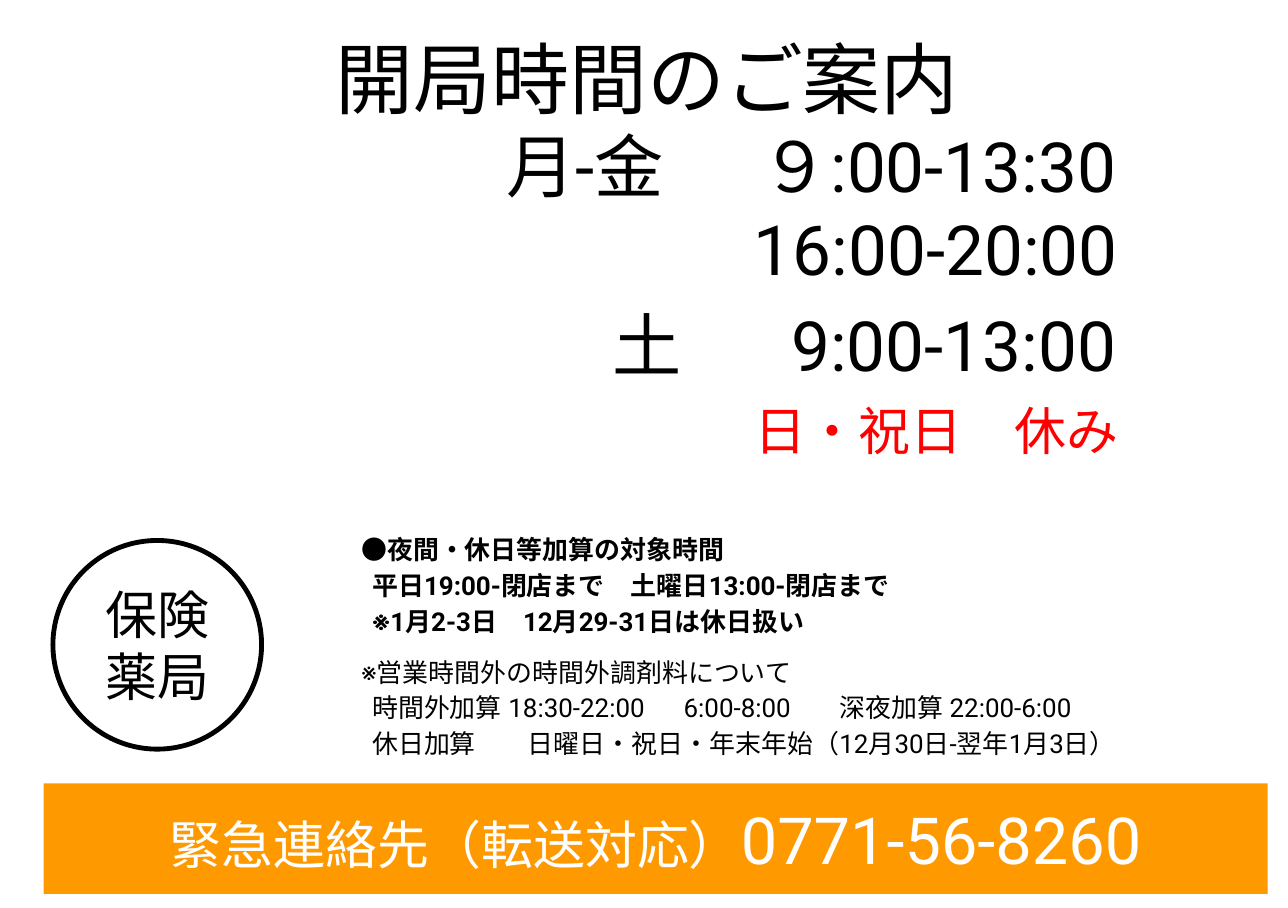
from lxml.etree import SubElement as Sub
from pptx import Presentation
from pptx.dml.color import RGBColor as Rgb
from pptx.enum.shapes import MSO_SHAPE as Geo
from pptx.enum.text import MSO_ANCHOR as Anchor, PP_ALIGN as Align
from pptx.oxml.ns import qn
from pptx.util import Inches, Pt

BLACK, WHITE, RED, ORANGE = "000000", "FFFFFF", "FF0000", "FF9900"


def color(code):
    return Rgb.from_string(code)


def write(para, text, size=12, font="Roboto", ink=BLACK, bold=False):
    """Add one formatted run to a paragraph."""
    run = para.add_run()
    run.text = text
    face = run.font
    face.size, face.name, face.bold = Pt(size), font, bold
    face.color.rgb = color(ink)
    for tag in ("a:ea", "a:cs"):
        Sub(run.font._element, qn(tag)).set("typeface", font)


class Board:
    """Holds the slide; places are percentages of its size."""

    def __init__(self, wide, high):
        self.deck = Presentation()
        self.deck.slide_width, self.deck.slide_height = Inches(wide), Inches(high)
        self.slide = self.deck.slides.add_slide(self.deck.slide_layouts[6])

    def place(self, left, top, wide, high):
        w, h = self.deck.slide_width / 100, self.deck.slide_height / 100
        return int(left * w), int(top * h), int(wide * w), int(high * h)

    def frame(self, item, pad, left=None, anchor=Anchor.MIDDLE):
        body = item.text_frame
        body.word_wrap, body.vertical_anchor = True, anchor
        body.margin_left = Inches(pad if left is None else left)
        body.margin_top = body.margin_right = body.margin_bottom = Inches(pad)
        return body

    def text(self, *box, **style):
        return self.frame(self.slide.shapes.add_textbox(*self.place(*box)), 0.07, **style)

    def shape(self, kind, *box, fill=None, line=None):
        item = self.slide.shapes.add_shape(kind, *self.place(*box))
        item.shadow.inherit = False
        if fill:
            item.fill.solid()
            item.fill.fore_color.rgb = color(fill)
        else:
            item.fill.background()
        if line:
            item.line.color.rgb = color(line)
            item.line.width = Pt(2.25)
        else:
            item.line.fill.background()
        return self.frame(item, 0.1)

    def para(self, body, align=Align.LEFT, space=None, before=0, after=0, indent=0, tabs=()):
        first = body.paragraphs[0]
        para = body.add_paragraph() if first.runs else first
        para.alignment = align
        para.space_before, para.space_after = Pt(before), Pt(after)
        if space:
            para.line_spacing = space
        props = para._p.get_or_add_pPr()
        if indent:
            props.set("marL", str(Inches(indent)))
            props.set("indent", "0")
        if tabs:
            stops = Sub(props, qn("a:tabLst"))
            for pos, side in tabs:
                stop = Sub(stops, qn("a:tab"))
                stop.set("pos", str(Inches(pos)))
                stop.set("algn", side)
        return para


def main():
    board = Board(8.27, 5.83)

    # Surcharge notes
    notes = board.text(23.82, 57.12, 73.4, 27.62, left=0.35)
    lines = [
        ("●夜間・休日等加算の対象時間", True, 0, 0, ()),
        ("平日19:00-閉店まで　土曜日13:00-閉店まで", True, 0.07, 0, ()),
        ("※1月2-3日　12月29-31日は休日扱い", True, 0.07, 0, ()),
        ("※営業時間外の時間外調剤料について", False, 0, 7, ()),
        ("時間外加算 18:30-22:00\t6:00-8:00\t深夜加算 22:00-6:00", False, 0.07, 0, (1.93, 2.87)),
        ("休日加算\t日曜日・祝日・年末年始（12月30日-翌年1月3日）", False, 0.07, 0, (0.92,)),
    ]
    for text, bold, indent, before, stops in lines:
        tabs = [(stop, "l") for stop in stops]
        para = board.para(notes, space=1.15, before=before, indent=indent, tabs=tabs)
        write(para, text, bold=bold)

    # Heading
    head = board.text(3.39, 2.4, 93.71, 12.18)
    write(board.para(head, Align.CENTER, after=6), "開局時間のご案内", size=36)

    # Emergency contact bar
    bar = board.shape(Geo.RECTANGLE, 3.39, 86.28, 95.04, 12.18, fill=ORANGE)
    para = board.para(bar, Align.CENTER)
    write(para, "緊急連絡先（転送対応）", size=24, ink=WHITE)
    write(para, "0771-56-8260", size=30, ink=WHITE)

    # Opening hours: day at a left tab, time at a right tab
    hours = board.text(14.27, 12.35, 73.4, 41, anchor=Anchor.TOP)
    for day, time, start, before in (
        ("月-金", "９:00-13:30", 2, 0),
        ("", "16:00-20:00", 0, 0),
        ("土", "9:00-13:00", 2.68, 6),
    ):
        if day:
            para = board.para(hours, before=before, tabs=[(start, "l"), (5.92, "r")])
            write(para, f"\t{day}\t{time}", size=32)
        else:
            write(board.para(hours, Align.RIGHT, before=before), time, size=32)
    para = board.para(hours, Align.RIGHT, before=6, after=6)
    write(para, "日・祝日　休み", size=24, ink=RED)

    # Round seal
    seal = board.shape(Geo.OVAL, 4.11, 59.52, 16.2, 22.98, line=BLACK)
    for text in ("保険", "薬局"):
        write(board.para(seal, Align.CENTER), text, size=24)

    board.deck.save("out.pptx")


if __name__ == "__main__":
    main()
